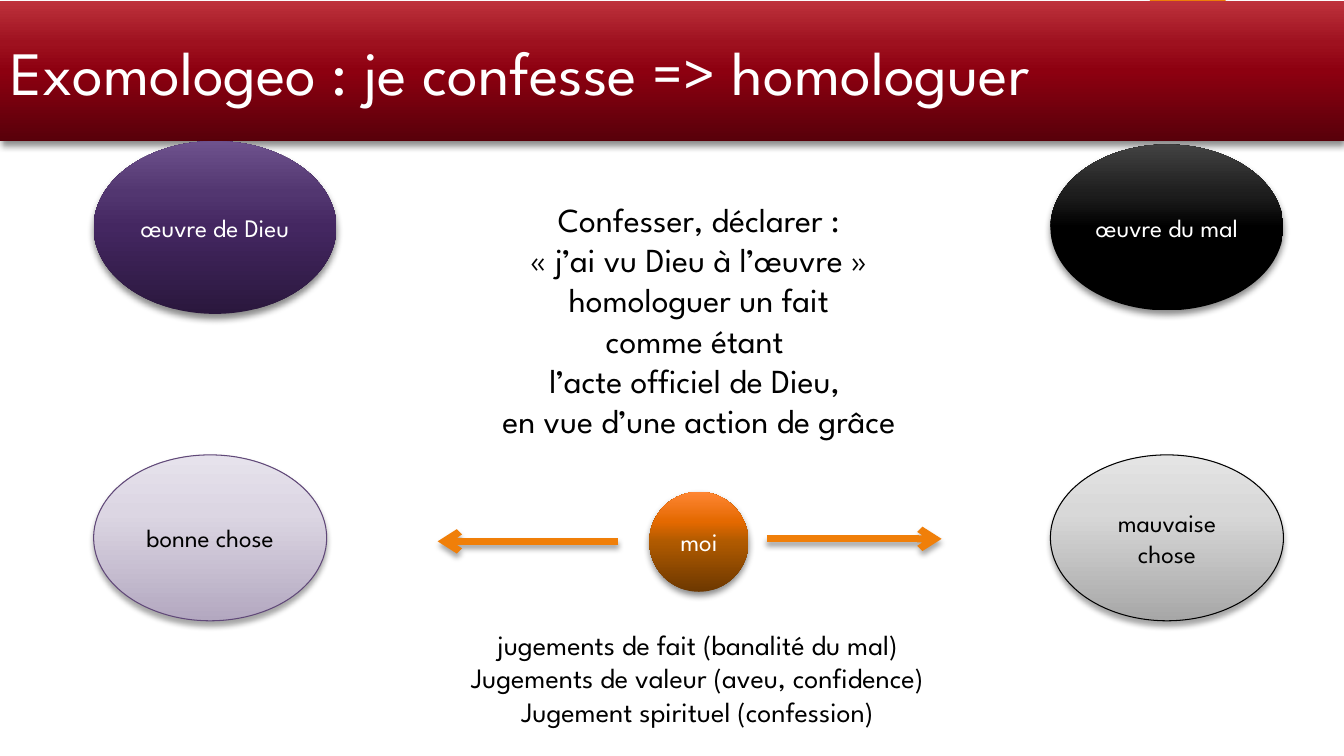
from lxml import etree
from pptx import Presentation
from pptx import util as u
from pptx.dml.color import RGBColor
from pptx.enum import shapes, text
from pptx.oxml import ns

FONT = "League Spartan"
ORANGE = "F07F09"
COLS, ROWS = 160, 90
DISC_W, DISC_RATIO = 27.75, 1.405
SOFT = (35, 4, 3)
STRONG = (45, 5, 3)

RED = ((0, "58000A"), (50, "8D0010"), (70, "9E111F"), (100, "BE323C"))
VIOLET = ((0, "2A173D"), (50, "442761"), (70, "523670"), (100, "6E528D"))
BLACK = ((0, "000000"), (50, "000000"), (70, "1D1D1D"), (100, "424242"))
AMBER = ((0, "6D3800"), (50, "B05A00"), (70, "E46900"), (100, "FF8634"))
LILAC = ((0, "B3A8C0"), (65, "DCD6E3"), (100, "E6E2EC"))
GREY = ((0, "A7A7A7"), (65, "D8D8D8"), (100, "E4E4E4"))

prs = Presentation()
prs.slide_width, prs.slide_height = u.Inches(13.33), u.Inches(7.5)


def rgb(value):
    return RGBColor.from_string(value)


def grid(x, y, w, h):
    col, row = prs.slide_width / COLS, prs.slide_height / ROWS
    return [int(n) for n in (x * col, y * row, w * col, h * row)]


def sub(parent, tag, **attrs):
    return etree.SubElement(parent, ns.qn(tag), attrs)


def add_shadow(sp, alpha, blur, dist):
    effects = sub(sp._element.spPr, "a:effectLst")
    shadow = sub(effects, "a:outerShdw", blurRad=str(u.Pt(blur)),
                 dist=str(u.Pt(dist)), dir="5400000", rotWithShape="0")
    color = sub(shadow, "a:srgbClr", val="000000")
    sub(color, "a:alpha", val=str(alpha * 1000))


def fill_gradient(sp, stops):
    sp.fill.gradient()
    sp.fill.gradient_angle = 90
    stop_list = sp._element.spPr.find(".//" + ns.qn("a:gsLst"))
    for old in list(stop_list):
        stop_list.remove(old)
    for pos, color in stops:
        stop = sub(stop_list, "a:gs", pos=str(pos * 1000))
        sub(stop, "a:srgbClr", val=color)


def write(sp, lines, size, color, align=text.PP_ALIGN.CENTER, wrap=True,
          anchor=text.MSO_ANCHOR.MIDDLE):
    tf = sp.text_frame
    tf.text = "\n".join(lines)
    tf.word_wrap, tf.vertical_anchor = wrap, anchor
    tf.auto_size = text.MSO_AUTO_SIZE.NONE
    for p in tf.paragraphs:
        p.alignment = align
        p.font.size, p.font.name = u.Pt(size), FONT
        p.font.color.rgb = rgb(color)


def add_disc(s, box, label, stops, color="FFFFFF", outline=None):
    sp = s.shapes.add_shape(shapes.MSO_SHAPE.OVAL, *grid(*box))
    fill_gradient(sp, stops)
    if outline:
        sp.line.color.rgb, sp.line.width = rgb(outline), u.Pt(0.75)
    else:
        sp.line.fill.background()
    add_shadow(sp, *(SOFT if outline else STRONG))
    write(sp, [label], 18, color)


def add_arrow(s, start, end, y):
    left, top, right, _ = grid(start, y, end, 0)
    line = s.shapes.add_connector(shapes.MSO_CONNECTOR.STRAIGHT,
                                  left, top, right, top)
    line.line.color.rgb, line.line.width = rgb(ORANGE), u.Pt(5)
    sub(line.line._get_or_add_ln(), "a:tailEnd", type="arrow")
    add_shadow(line, *SOFT)


def add_text(s, box, lines, size, wrap=True):
    sp = s.shapes.add_textbox(*grid(*box))
    write(sp, lines, size, "000000", wrap=wrap, anchor=text.MSO_ANCHOR.TOP)


def banner(s, box, title):
    x, y, w, h = box
    tab = s.shapes.add_shape(shapes.MSO_SHAPE.RECTANGLE,
                             *grid(x + 136.9, 0, 9, 15))
    tab.fill.solid()
    tab.fill.fore_color.rgb = rgb(ORANGE)
    tab.line.fill.background()
    add_shadow(tab, *SOFT)
    sp = s.shapes.title
    sp._element.addprevious(tab._element)
    sp.left, sp.top, sp.width, sp.height = grid(x, y, w, h)
    fill_gradient(sp, RED)
    sp.line.fill.background()
    add_shadow(sp, *STRONG)
    write(sp, [title], 44, "FFFFFF", align=text.PP_ALIGN.LEFT)


def side(s, box, work, work_stops, thing, thing_stops, outline):
    x, y, w, h = box
    disc_h = DISC_W / DISC_RATIO
    add_disc(s, (x, y, w, w / DISC_RATIO), work, work_stops)
    add_disc(s, (x, y + h - disc_h, DISC_W, disc_h), thing, thing_stops,
             "000000", outline)


def centre(s, box, statement, judgements):
    x, y, w, h = box
    add_text(s, (x + 7.5, y, 62.2, 30.2), statement, 24, wrap=False)
    add_disc(s, (x + 32.7, y + 35.5, 11.8, 11.9), "moi", AMBER)
    add_arrow(s, x + 29, x + 7.5, y + 41.4)
    add_arrow(s, x + 46.7, x + 67.5, y + 41.1)
    add_text(s, (x, y + h - 13.3, w, 13.3), judgements, 20)


def main():
    s = prs.slides.add_slide(prs.slide_layouts[5])
    banner(s, (0, 0.1, COLS, 16.7), "Exomologeo : je confesse => homologuer")
    side(s, (11.15, 16.8, 28.9, 57.1), "œuvre de Dieu", VIOLET,
         "bonne chose", LILAC, "604878")
    side(s, (125.05, 17.2, DISC_W, 56.7), "œuvre du mal", BLACK,
         "mauvaise chose", GREY, "000000")
    centre(s, (44.6, 23.05, 76.9, 64.3),
           ["Confesser, déclarer :", "« j’ai vu Dieu à l’œuvre »",
            "homologuer un fait", "comme étant ",
            "l’acte officiel de Dieu, ", "en vue d’une action de grâce"],
           ["jugements de fait (banalité du mal)",
            "Jugements de valeur (aveu, confidence)",
            "Jugement spirituel (confession)"])
    prs.save("out.pptx")


if __name__ == "__main__":
    main()
